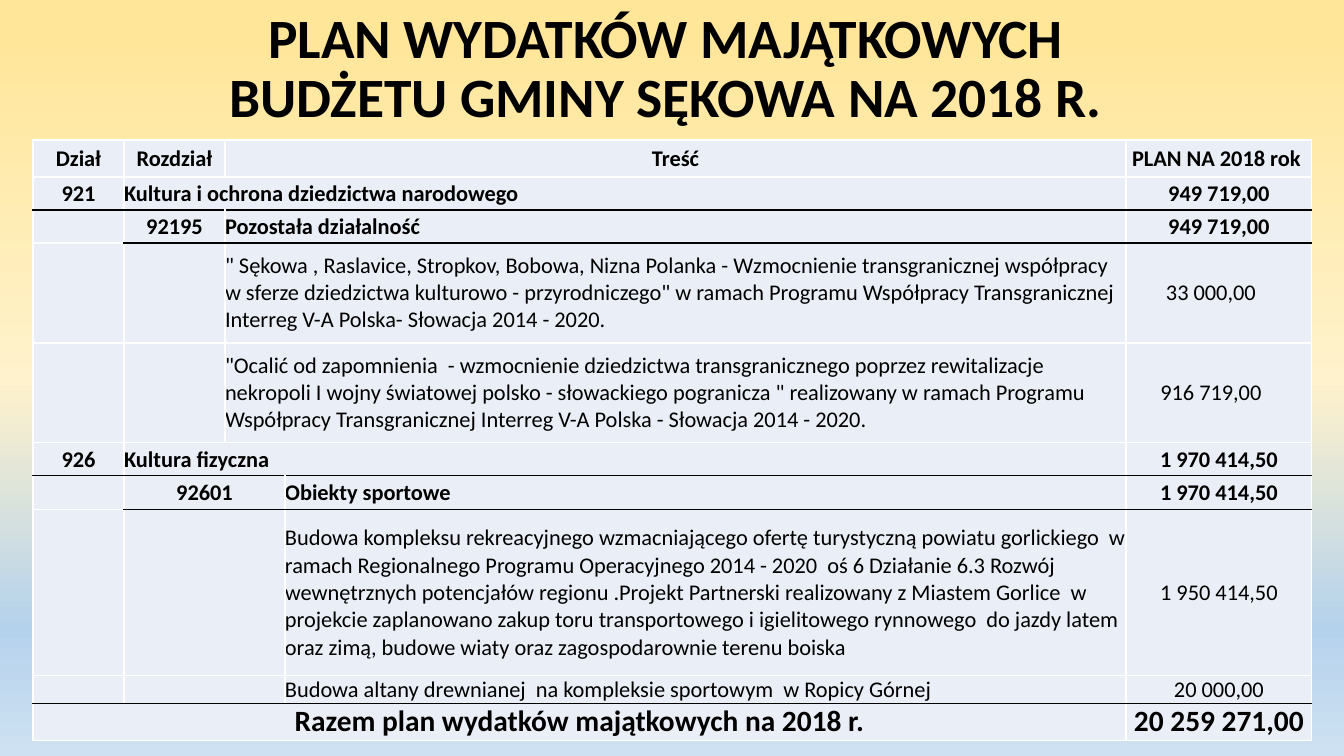
from copy import deepcopy

from lxml import etree
from pptx import Presentation
from pptx import util as u
from pptx.dml.color import RGBColor
from pptx.enum import text
from pptx.oxml.ns import qn

PX = 914400 / 100.8
FONT = "Calibri"
BLACK = RGBColor(0x00, 0x00, 0x00)
WHITE = RGBColor(0xFF, 0xFF, 0xFF)
CELL_FILL = RGBColor(0xEA, 0xEF, 0xF7)
SKY = [
    (0.04, RGBColor(0xFF, 0xE6, 0x99)),
    (0.50, RGBColor(0xFF, 0xF2, 0xCC)),
    (0.83, RGBColor(0xB5, 0xD2, 0xEC)),
    (1.00, RGBColor(0xCE, 0xE1, 0xF2)),
]

COLUMN_WIDTHS = [91, 101, 60, 841, 186]
ROW_HEIGHTS = [37, 33, 33, 100, 100, 33, 34, 166, 27, 37]
# Each row: (column, columns covered, wording)
ROWS = [
    [(0, 1, "Dział"), (1, 1, "Rozdział"), (2, 2, "Treść"), (4, 1, "PLAN NA 2018 rok ")],
    [(0, 1, "921"), (1, 3, "Kultura i ochrona dziedzictwa narodowego"), (4, 1, "949 719,00")],
    [(1, 1, "92195"), (2, 2, "Pozostała działalność"), (4, 1, "949 719,00")],
    [(2, 2, '" Sękowa , Raslavice, Stropkov, Bobowa, Nizna Polanka - Wzmocnienie '
            "transgranicznej współpracy w sferze dziedzictwa kulturowo - "
            'przyrodniczego" w ramach Programu Współpracy Transgranicznej '
            "Interreg V-A Polska- Słowacja 2014 - 2020."),
     (4, 1, "33 000,00")],
    [(2, 2, '"Ocalić od zapomnienia  - wzmocnienie dziedzictwa transgranicznego '
            "poprzez rewitalizacje nekropoli I wojny światowej polsko - słowackiego "
            'pogranicza " realizowany w ramach Programu Współpracy Transgranicznej '
            "Interreg V-A Polska - Słowacja 2014 - 2020."),
     (4, 1, "916 719,00")],
    [(0, 1, "926"), (1, 3, "Kultura fizyczna"), (4, 1, "1 970 414,50")],
    [(1, 2, "92601"), (3, 1, "Obiekty sportowe"), (4, 1, "1 970 414,50")],
    [(1, 2, ""),
     (3, 1, "Budowa kompleksu rekreacyjnego wzmacniającego ofertę turystyczną powiatu "
            "gorlickiego  w ramach Regionalnego Programu Operacyjnego 2014 - 2020  "
            "oś 6 Działanie 6.3 Rozwój wewnętrznych potencjałów regionu .Projekt "
            "Partnerski realizowany z Miastem Gorlice  w projekcie zaplanowano zakup "
            "toru transportowego i igielitowego rynnowego  do jazdy latem oraz zimą, "
            "budowe wiaty oraz zagospodarownie terenu boiska"),
     (4, 1, "1 950 414,50")],
    [(1, 2, ""),
     (3, 1, "Budowa altany drewnianej  na kompleksie sportowym  w Ropicy Górnej"),
     (4, 1, "20 000,00")],
    [(0, 4, "Razem plan wydatków majątkowych na 2018 r."), (4, 1, "20 259 271,00")],
]
DETAIL_ROWS = {3, 4, 7, 8}
SHIFTED_AMOUNT_ROWS = {3, 4}
TOTAL_ROW = len(ROWS) - 1
# Row above a black rule: first column of the rule
BLACK_RULES = {1: 0, 2: 1, 5: 0, 6: 1, 8: 0}


def px(length):
    return u.Emu(round(length * PX))


def add_border(cell, side, color):
    line = etree.SubElement(cell._tc.get_or_add_tcPr(), qn("a:ln" + side), w="12700")
    fill = etree.SubElement(line, qn("a:solidFill"))
    etree.SubElement(fill, qn("a:srgbClr"), val=str(color))


presentation = Presentation()
presentation.slide_width = px(1344)
presentation.slide_height = px(756)
slide = presentation.slides.add_slide(presentation.slide_layouts[5])

# Background gradient
background = slide.background.fill
background.gradient()
background.gradient_angle = 270
stop_list = slide._element.find(".//" + qn("a:gsLst"))
while len(stop_list) < len(SKY):
    stop_list.append(deepcopy(stop_list[0]))
for stop, (position, color) in zip(background.gradient_stops, SKY):
    stop.position = position
    stop.color.rgb = color

# Title
title = slide.shapes.title
title.left, title.top, title.width, title.height = px(33), px(0), px(1278), px(140)
title.text_frame.text = "PLAN WYDATKÓW MAJĄTKOWYCH \vBUDŻETU GMINY SĘKOWA NA 2018 R. "
title.text_frame.word_wrap = True
title.text_frame.auto_size = text.MSO_AUTO_SIZE.NONE
title.text_frame.vertical_anchor = text.MSO_ANCHOR.MIDDLE
heading = title.text_frame.paragraphs[0]
heading.alignment = text.PP_ALIGN.CENTER
heading.line_spacing = 0.9
for run in heading.runs:
    run.font.name, run.font.size, run.font.bold = FONT, u.Pt(39.6), True
    run.font.color.rgb = BLACK

# Table grid
table = slide.shapes.add_table(
    len(ROWS), len(COLUMN_WIDTHS), px(33), px(140),
    px(sum(COLUMN_WIDTHS)), px(sum(ROW_HEIGHTS)),
).table
table.first_row = table.horz_banding = False
for column, width in zip(table.columns, COLUMN_WIDTHS):
    column.width = px(width)
for row, height in zip(table.rows, ROW_HEIGHTS):
    row.height = px(height)

# Wording
for r, entries in enumerate(ROWS):
    for c, span, wording in entries:
        cell = table.cell(r, c)
        if span > 1:
            cell.merge(table.cell(r, c + span - 1))
        cell.text_frame.text = wording
        paragraph = cell.text_frame.paragraphs[0]
        is_description = c + span == 4 and 0 < r < TOTAL_ROW
        paragraph.alignment = text.PP_ALIGN.LEFT if is_description else text.PP_ALIGN.CENTER
        for run in paragraph.runs:
            run.font.name = FONT
            run.font.size = u.Pt(21 if r == TOTAL_ROW else 16)
            run.font.bold = r not in DETAIL_ROWS
            run.font.color.rgb = BLACK

# Cell margins, borders and fill
for r in range(len(ROWS)):
    for c in range(len(COLUMN_WIDTHS)):
        cell = table.cell(r, c)
        cell.margin_left = cell.margin_top = cell.margin_bottom = 0
        cell.margin_right = px(16) if c == 4 and r in SHIFTED_AMOUNT_ROWS else 0
        cell.vertical_anchor = text.MSO_ANCHOR.MIDDLE
        if not cell.is_spanned:
            add_border(cell, "L", WHITE)
            add_border(cell, "R", WHITE)
        for side, rule_row in (("T", r - 1), ("B", r)):
            is_black = c >= BLACK_RULES.get(rule_row, len(COLUMN_WIDTHS))
            add_border(cell, side, BLACK if is_black else WHITE)
        cell.fill.solid()
        cell.fill.fore_color.rgb = CELL_FILL
        if not cell.text_frame.text:
            # Empty cells keep the small type size so that rows stay low
            etree.SubElement(cell.text_frame.paragraphs[0]._p, qn("a:endParaRPr"), sz="1600")

presentation.save("out.pptx")
